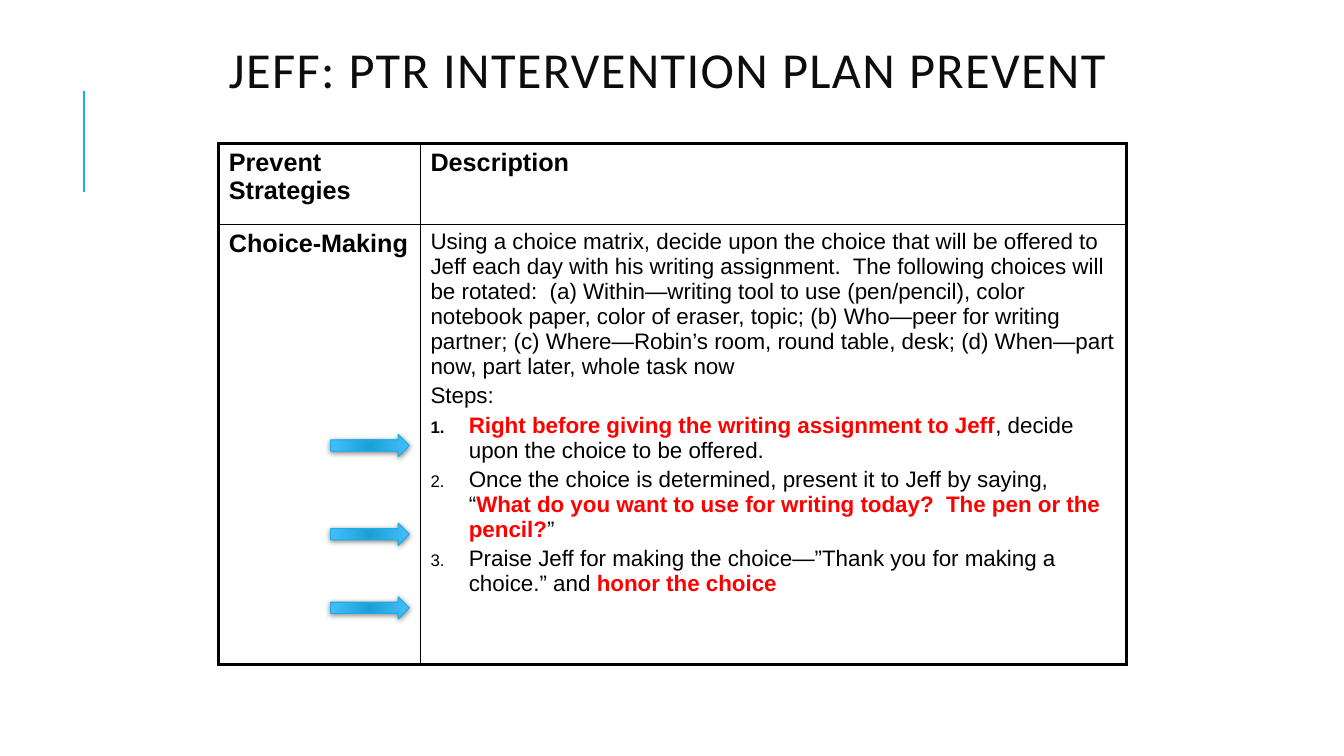
from dataclasses import dataclass
from lxml import etree
from pptx import Presentation
from pptx.dml.color import RGBColor as Rgb
from pptx.enum.shapes import MSO_CONNECTOR as Connector, MSO_SHAPE as Preset
from pptx.enum.text import MSO_ANCHOR as Anchor, PP_ALIGN as Align
from pptx.oxml import parse_xml
from pptx.oxml.ns import nsdecls, qn
from pptx.util import Inches, Pt


@dataclass(frozen=True)
class Theme:
    accent: str = "1CADE4"
    arrow_dark: str = "1AA1D4"
    arrow_light: str = "48BFFF"
    title: str = "0D0D0D"
    text: str = "000000"
    highlight: str = "FF0000"
    title_font: str = "Calibri"
    table_font: str = "Arial"
    title_size: int = 36
    heading_size: int = 18
    body_size: int = 16
    outer_border: float = 2.25
    inner_border: float = 1


theme = Theme()

TITLE = "JEFF: PTR INTERVENTION PLAN PREVENT"
HEADINGS = ["Prevent Strategies", "Description"]
STRATEGY = "Choice-Making"
DESCRIPTION = [
    "Using a choice matrix, decide upon the choice that will be offered to Jeff each day "
    "with his writing assignment.  The following choices will be rotated:  "
    "(a) Within—writing tool to use (pen/pencil), color notebook paper, color of eraser, topic; "
    "(b) Who—peer for writing partner; (c) Where—Robin’s room, round table, desk; "
    "(d) When—part now, part later, whole task now",
    "Steps:",
]
STEPS = [
    [("Right before giving the writing assignment to Jeff", True),
     (", decide upon the choice to be offered.", False)],
    [("Once the choice is determined, present it to Jeff by saying, “", False),
     ("What do you want to use for writing today?  The pen or the pencil?", True),
     ("”", False)],
    [("Praise Jeff for making the choice—”Thank you for making a choice.” and ", False),
     ("honor the choice", True)],
]
ARROW_TOPS = [4.31, 5.19, 5.92]
COLUMN_WIDTHS = [2, 7]
ROW_HEIGHTS = [0.81, 4.36]
TABLE_LEFT, TABLE_TOP = 2.17, 1.42


def style(run, font, size, color, bold=False):
    run.font.name = font
    run.font.size = Pt(size)
    run.font.bold = bold
    run.font.color.rgb = Rgb.from_string(color)


def write(paragraph, pieces, size):
    for words, color, bold in pieces:
        run = paragraph.add_run()
        run.text = words
        style(run, theme.table_font, size, color, bold)


def number(paragraph):
    props = paragraph._p.get_or_add_pPr()
    props.set("marL", str(Inches(0.38)))
    props.set("indent", str(-Inches(0.38)))
    bullet_color = etree.SubElement(props, qn("a:buClr"))
    etree.SubElement(bullet_color, qn("a:srgbClr"), val=theme.text)
    etree.SubElement(props, qn("a:buSzPct"), val="75000")
    etree.SubElement(props, qn("a:buAutoNum"), type="arabicPeriod")


def add_borders(cell, row, column):
    last_row, last_column = len(ROW_HEIGHTS) - 1, len(COLUMN_WIDTHS) - 1
    outer_sides = [("lnL", column == 0), ("lnR", column == last_column),
                   ("lnT", row == 0), ("lnB", row == last_row)]
    for place, (side, outer) in enumerate(outer_sides):
        width = Pt(theme.outer_border if outer else theme.inner_border)
        cell._tc.get_or_add_tcPr().insert(place, parse_xml(
            f'<a:{side} {nsdecls("a")} w="{width}"><a:solidFill>'
            f'<a:srgbClr val="{theme.text}"/></a:solidFill></a:{side}>'))


def add_title(slide):
    box = slide.shapes.add_textbox(Inches(2.17), Inches(0.3), Inches(9), Inches(0.86))
    frame = box.text_frame
    frame.word_wrap = True
    frame.vertical_anchor = Anchor.MIDDLE
    frame.text = TITLE
    heading = frame.paragraphs[0]
    heading.alignment = Align.LEFT
    heading.line_spacing = 0.8
    style(heading.runs[0], theme.title_font, theme.title_size, theme.title)
    heading.runs[0].font._element.set("spc", "100")


def add_plan(slide):
    plan = slide.shapes.add_table(
        len(ROW_HEIGHTS), len(COLUMN_WIDTHS), Inches(TABLE_LEFT), Inches(TABLE_TOP),
        Inches(sum(COLUMN_WIDTHS)), Inches(sum(ROW_HEIGHTS))).table
    plan.first_row = plan.horz_banding = False
    for column, width in zip(plan.columns, COLUMN_WIDTHS):
        column.width = Inches(width)
    for row, height in zip(plan.rows, ROW_HEIGHTS):
        row.height = Inches(height)
    for row in range(len(ROW_HEIGHTS)):
        for column in range(len(COLUMN_WIDTHS)):
            cell = plan.cell(row, column)
            cell.fill.background()
            add_borders(cell, row, column)

    labels = [(0, 0, HEADINGS[0]), (0, 1, HEADINGS[1]), (1, 0, STRATEGY)]
    for row, column, label in labels:
        write(plan.cell(row, column).text_frame.paragraphs[0],
              [(label, theme.text, True)], theme.heading_size)

    frame = plan.cell(1, 1).text_frame
    passages = [([(words, False)], False) for words in DESCRIPTION]
    passages += [(step, True) for step in STEPS]
    for place, (pieces, numbered) in enumerate(passages):
        paragraph = frame.add_paragraph() if place else frame.paragraphs[0]
        if numbered:
            number(paragraph)
        if place:
            paragraph.space_before = Pt(0.2 * theme.body_size)
        write(paragraph,
              [(words, theme.highlight if key else theme.text, key) for words, key in pieces],
              theme.body_size)


def add_arrow(slide, top):
    arrow = slide.shapes.add_shape(
        Preset.RIGHT_ARROW, Inches(3.28), Inches(top), Inches(0.78), Inches(0.22))
    arrow.line.color.rgb = Rgb.from_string(theme.accent)
    arrow.line.width = Pt(0.75)
    props = arrow._element.spPr
    outline = props.find(qn("a:ln"))
    outline.addprevious(parse_xml(
        f'<a:gradFill {nsdecls("a")} rotWithShape="1"><a:gsLst>'
        f'<a:gs pos="0"><a:srgbClr val="{theme.arrow_dark}"/></a:gs>'
        f'<a:gs pos="100000"><a:srgbClr val="{theme.arrow_light}"/></a:gs></a:gsLst>'
        '<a:path path="circle"><a:fillToRect l="100000" t="100000" r="100000" b="100000"/>'
        '</a:path></a:gradFill>'))
    outline.addnext(parse_xml(
        f'<a:effectLst {nsdecls("a")}><a:outerShdw blurRad="{Pt(4)}" dist="{Pt(1)}" '
        f'dir="5400000" rotWithShape="0"><a:srgbClr val="{theme.text}">'
        '<a:alpha val="50000"/></a:srgbClr></a:outerShdw></a:effectLst>'))


def add_accent(slide):
    accent = slide.shapes.add_connector(
        Connector.STRAIGHT, Inches(0.83), Inches(1.9), Inches(0.83), Inches(0.9))
    accent.line.color.rgb = Rgb.from_string(theme.accent)
    accent.line.width = Pt(1.5)
    etree.SubElement(accent._element.spPr, qn("a:effectLst"))


def main():
    deck = Presentation()
    deck.slide_width, deck.slide_height = Inches(13.33), Inches(7.5)
    slide = deck.slides.add_slide(deck.slide_layouts[6])
    add_accent(slide)
    add_title(slide)
    add_plan(slide)
    for top in ARROW_TOPS:
        add_arrow(slide, top)
    deck.save("out.pptx")


if __name__ == "__main__":
    main()
